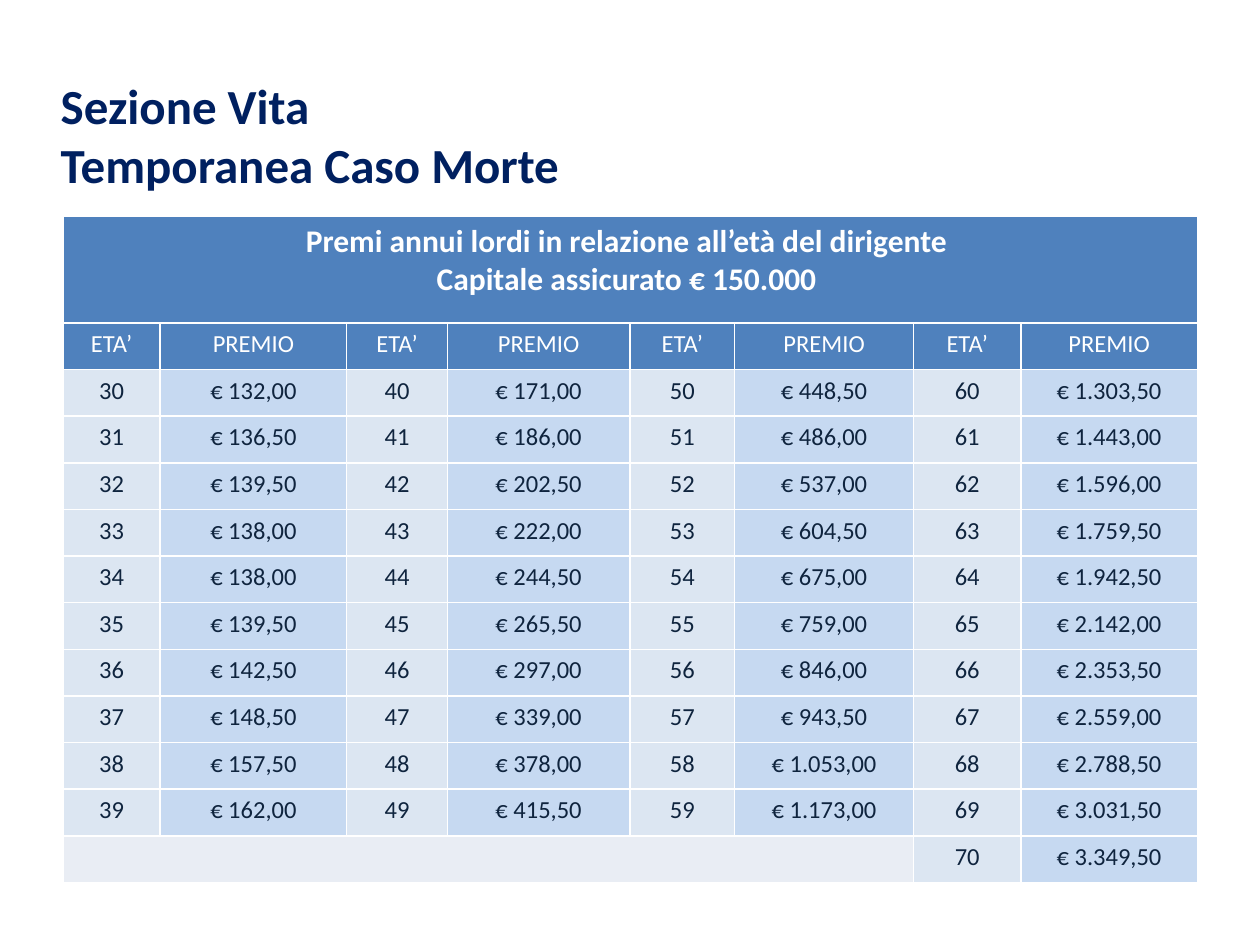
"""Build the slide with the yearly life-cover premiums by age."""
from dataclasses import dataclass

from pptx import Presentation
from pptx.dml.color import RGBColor
from pptx.enum.text import MSO_ANCHOR as Anchor, PP_ALIGN as Align
from pptx.util import Cm, Pt

COLORS = {
    "title": "002060",
    "header": "4F81BD",
    "header_text": "FFFFFF",
    "age": "DCE6F2",
    "premium": "C6D9F1",
    "blank": "E9EDF4",
    "body_text": "0F243E",
}
FONT = "Calibri"
COLUMN_WIDTHS = (1.96, 3.76, 2.03, 3.68, 2.11, 3.61, 2.16, 3.56)
BANNER_HEIGHT, ROW_HEIGHT = 2.16, 0.94
ROW_COUNT = 13
BANNER = "Premi annui lordi in relazione all’età del dirigente \nCapitale assicurato € 150.000 "


@dataclass(frozen=True)
class AgeBand:
    first_age: int
    premiums: tuple[str, ...]


@dataclass(frozen=True)
class CellStyle:
    fill: str
    text: str
    size: int = 14
    bold: bool = False


BANDS = (
    AgeBand(30, ("132,00", "136,50", "139,50", "138,00", "138,00",
                 "139,50", "142,50", "148,50", "157,50", "162,00")),
    AgeBand(40, ("171,00", "186,00", "202,50", "222,00", "244,50",
                 "265,50", "297,00", "339,00", "378,00", "415,50")),
    AgeBand(50, ("448,50", "486,00", "537,00", "604,50", "675,00",
                 "759,00", "846,00", "943,50", "1.053,00", "1.173,00")),
    AgeBand(60, ("1.303,50", "1.443,00", "1.596,00", "1.759,50", "1.942,50",
                 "2.142,00", "2.353,50", "2.559,00", "2.788,50", "3.031,50",
                 "3.349,50")),
)
BANNER_STYLE = CellStyle("header", "header_text", 18, True)
HEADING_STYLE = CellStyle("header", "header_text")
AGE_STYLE = CellStyle("age", "body_text")
PREMIUM_STYLE = CellStyle("premium", "body_text")
BLANK_STYLE = CellStyle("blank", "body_text")


def format_paragraphs(frame, color: str, size: int, bold: bool, align: Align) -> None:
    """Give every paragraph of a text frame the same font and alignment."""
    for paragraph in frame.paragraphs:
        paragraph.alignment = align
        font = paragraph.font
        font.name, font.size, font.bold = FONT, Pt(size), bold
        font.color.rgb = RGBColor.from_string(COLORS[color])


def fill_cell(cell, text: str, style: CellStyle) -> None:
    """Write and colour one table cell."""
    cell.text = text
    cell.fill.solid()
    cell.fill.fore_color.rgb = RGBColor.from_string(COLORS[style.fill])
    format_paragraphs(cell.text_frame, style.text, style.size, style.bold, Align.CENTER)


def add_title(slide) -> None:
    """Place the two-line title."""
    title = slide.shapes.title
    title.left, title.top, title.width, title.height = Cm(0.97), Cm(1.4), Cm(13.84), Cm(2.64)
    frame = title.text_frame
    frame.text = "Sezione Vita\nTemporanea Caso Morte"
    frame.vertical_anchor = Anchor.TOP
    format_paragraphs(frame, "title", 28, True, Align.LEFT)


def add_band(table, band: AgeBand, column: int) -> None:
    """Fill the age and premium columns of one ten-year band."""
    fill_cell(table.cell(1, column), "ETA’", HEADING_STYLE)
    fill_cell(table.cell(1, column + 1), "PREMIO", HEADING_STYLE)
    for offset, premium in enumerate(band.premiums):
        fill_cell(table.cell(offset + 2, column), str(band.first_age + offset), AGE_STYLE)
        fill_cell(table.cell(offset + 2, column + 1), f"€ {premium}", PREMIUM_STYLE)


def add_premium_table(slide) -> None:
    """Draw the premium table with its banner and age bands."""
    height = BANNER_HEIGHT + ROW_HEIGHT * (ROW_COUNT - 1)
    table = slide.shapes.add_table(
        ROW_COUNT, len(COLUMN_WIDTHS), Cm(1.27), Cm(4.35),
        Cm(sum(COLUMN_WIDTHS)), Cm(height)).table
    for column, width in zip(table.columns, COLUMN_WIDTHS):
        column.width = Cm(width)
    for index, row in enumerate(table.rows):
        row.height = Cm(ROW_HEIGHT if index else BANNER_HEIGHT)

    last_row = ROW_COUNT - 1
    table.cell(0, 0).merge(table.cell(0, len(COLUMN_WIDTHS) - 1))
    fill_cell(table.cell(0, 0), BANNER, BANNER_STYLE)
    for index, band in enumerate(BANDS):
        add_band(table, band, 2 * index)
    table.cell(last_row, 0).merge(table.cell(last_row, 5))
    for column in range(6):
        fill_cell(table.cell(last_row, column), "", BLANK_STYLE)


def main() -> None:
    """Create and save the presentation."""
    deck = Presentation()
    deck.slide_width, deck.slide_height = Cm(25.4), Cm(19.05)
    slide = deck.slides.add_slide(deck.slide_layouts[5])
    add_premium_table(slide)
    add_title(slide)
    deck.save("out.pptx")


if __name__ == "__main__":
    main()
